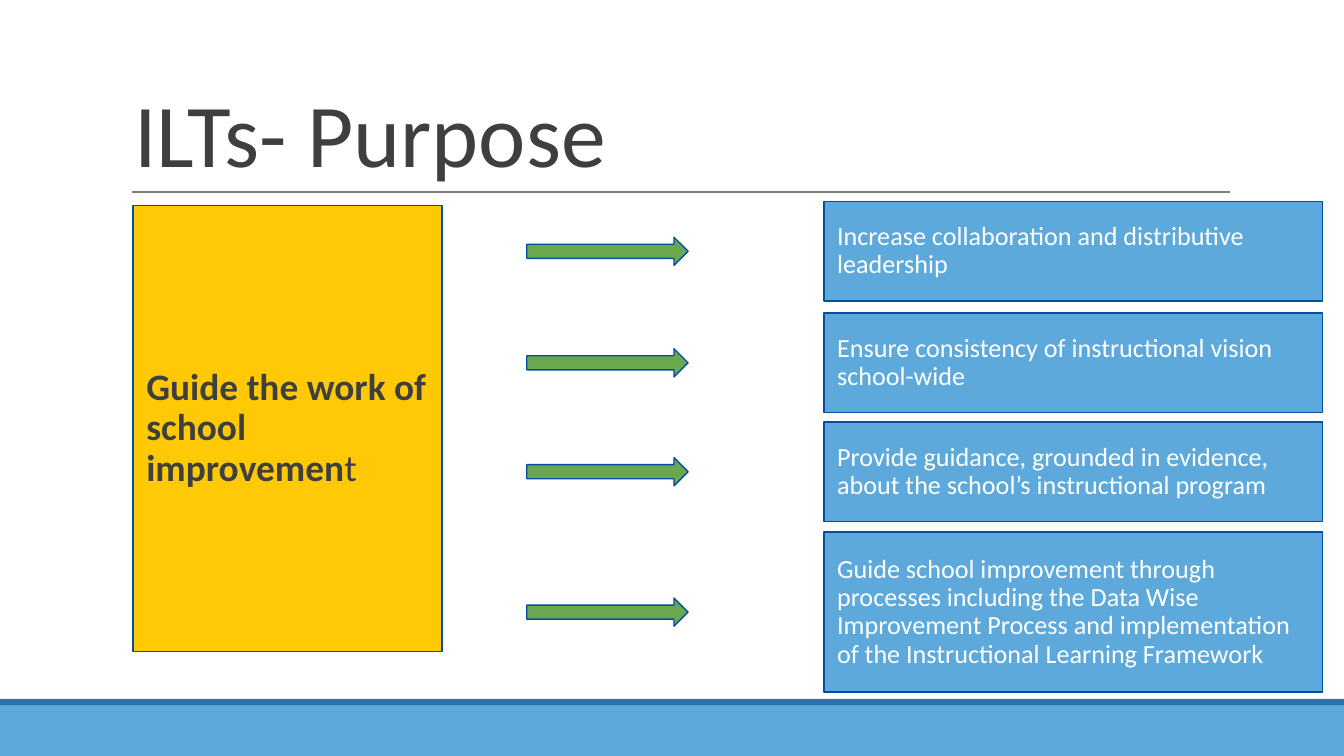
import pptx
import pptx.util
import pptx.dml.color
import pptx.enum.shapes
import pptx.enum.text
import pptx.oxml

Inches, Pt = pptx.util.Inches, pptx.util.Pt
SHAPE = pptx.enum.shapes.MSO_SHAPE
ANCHOR = pptx.enum.text.MSO_ANCHOR

COLORS = {"sky": "5DA9DB", "band": "2275B9", "rule": "7F7F7F", "text": "3F3F3F",
          "gold": "FFCA05", "outline": "034EA1", "green": "6AA84F", "white": "FFFFFF"}
FONT = "Calibri"

TITLE = [("ILTs- Purpose", False)]
GOAL = [("Guide the work of school improvemen", True), ("t", False)]
PURPOSES = [  # text, box top, box height
    ("Increase collaboration and distributive leadership", 1.5, 0.74),
    ("Ensure consistency of instructional vision school-wide", 2.33, 0.74),
    ("Provide guidance, grounded in evidence, about the school’s instructional program",
     3.14, 0.74),
    ("Guide school improvement through processes including the Data Wise Improvement "
     "Process and implementation of the Instructional Learning Framework", 3.96, 1.19),
]
PURPOSE_LEFT, PURPOSE_WIDTH = 6.13, 3.71
ARROW_LEFT, ARROW_WIDTH, ARROW_HEIGHT = 3.92, 1.2, 0.21


def rgb(name):
    return pptx.dml.color.RGBColor.from_string(COLORS[name])


def add_block(slide, kind, left, top, width, height, fill, outline=None):
    block = slide.shapes.add_shape(kind, Inches(left), Inches(top), Inches(width), Inches(height))
    block.shadow.inherit = False
    block.fill.solid()
    block.fill.fore_color.rgb = rgb(fill)
    if outline:
        block.line.color.rgb = rgb(outline)
        block.line.width = Pt(0.75)
    else:
        block.line.fill.background()
    return block


def write(holder, runs, size, color, anchor, spacing, inset=0.1):
    """Put (text, bold) runs in one left-aligned paragraph; inset is top and bottom."""
    frame = holder.text_frame
    frame.word_wrap = True
    frame.vertical_anchor = anchor
    frame.margin_left = frame.margin_right = Inches(0.1)
    frame.margin_top = frame.margin_bottom = Inches(inset)
    paragraph = frame.paragraphs[0]
    paragraph.alignment = pptx.enum.text.PP_ALIGN.LEFT
    paragraph.line_spacing = spacing
    for text, bold in runs:
        run = paragraph.add_run()
        run.text = text
        run.font.name = FONT
        run.font.size = Pt(size)
        run.font.bold = bold
        run.font.color.rgb = rgb(color)


def add_frame(slide):
    """Footer bands, title rule and title."""
    add_block(slide, SHAPE.RECTANGLE, 0, 5.25, 10, 0.38, "sky")
    add_block(slide, SHAPE.RECTANGLE, 0, 5.2, 10, 0.05, "band")
    rule = slide.shapes.add_connector(pptx.enum.shapes.MSO_CONNECTOR.STRAIGHT,
                                      Inches(0.98), Inches(1.43), Inches(9.15), Inches(1.43))
    rule.line.color.rgb = rgb("rule")
    rule.line.width = Pt(0.75)
    rule._element.spPr.append(pptx.oxml.parse_xml(
        '<a:effectLst xmlns:a="http://schemas.openxmlformats.org/drawingml/2006/main"/>'))
    title = slide.shapes.add_textbox(Inches(0.9), Inches(0.24), Inches(8.25), Inches(1.19))
    write(title, TITLE, 48, "text", ANCHOR.BOTTOM, 0.85, inset=0.05)


def add_purposes(slide):
    """Draw the purpose boxes, each with an arrow at its mid-height."""
    for text, top, height in PURPOSES:
        purpose = add_block(slide, SHAPE.RECTANGLE, PURPOSE_LEFT, top, PURPOSE_WIDTH, height,
                            "sky", "outline")
        write(purpose, [(text, False)], 14, "white", ANCHOR.MIDDLE, 0.9)
        add_block(slide, SHAPE.RIGHT_ARROW, ARROW_LEFT, top + (height - ARROW_HEIGHT) / 2,
                  ARROW_WIDTH, ARROW_HEIGHT, "green", "outline")


def main():
    deck = pptx.Presentation()
    deck.slide_width = Inches(10)
    deck.slide_height = deck.slide_width * 9 // 16
    slide = deck.slides.add_slide(deck.slide_layouts[6])
    add_frame(slide)
    goal = add_block(slide, SHAPE.RECTANGLE, 0.99, 1.53, 2.3, 3.32, "gold", "outline")
    write(goal, GOAL, 20, "text", ANCHOR.MIDDLE, 0.9)
    add_purposes(slide)
    deck.save("out.pptx")


if __name__ == "__main__":
    main()
